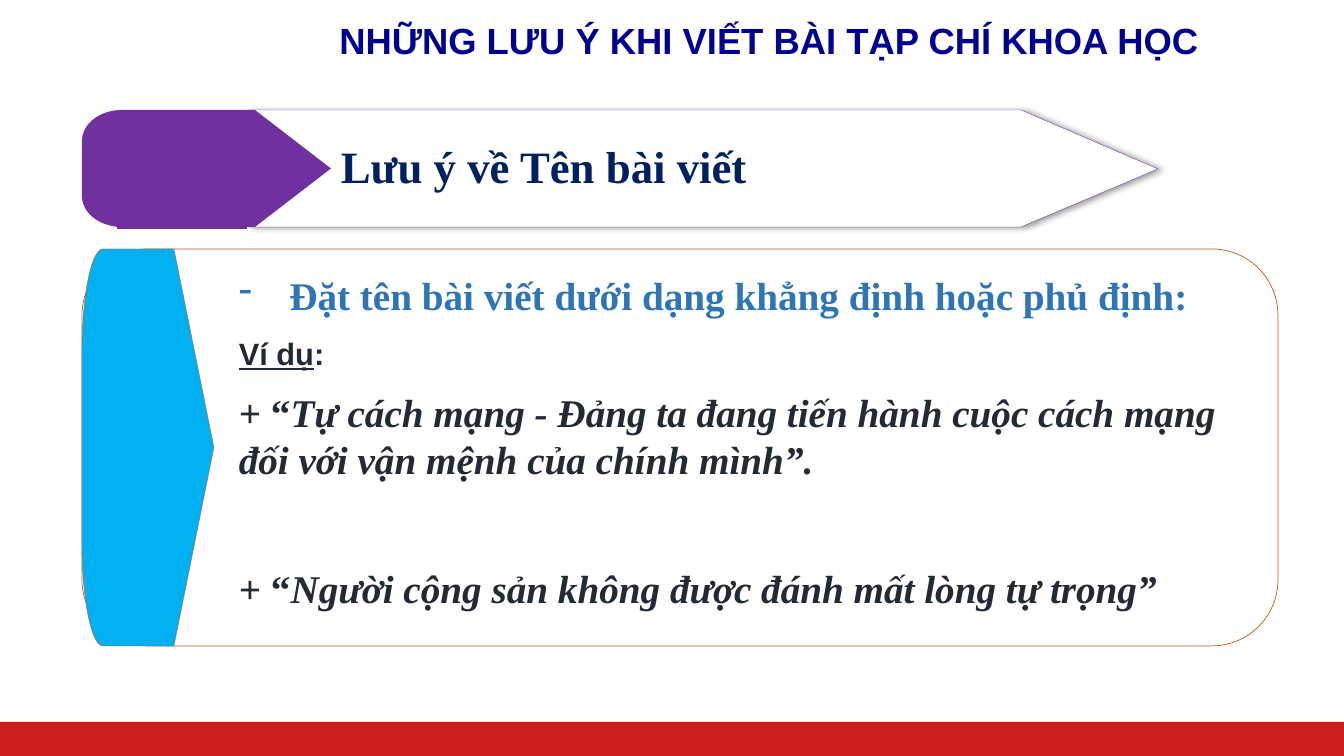
import math

from lxml import etree
from pptx import Presentation, util as u
from pptx.dml.color import RGBColor
from pptx.enum import shapes, text
from pptx.oxml import ns

SCALE = 914400 / 100.8  # EMU in one px

WHITE = RGBColor(0xFF, 0xFF, 0xFF)
RED = RGBColor(0xCD, 0x1D, 0x1D)
ORANGE = RGBColor(0xC5, 0x5A, 0x11)
CYAN = RGBColor(0x00, 0xB0, 0xF0)
PURPLE = RGBColor(0x70, 0x30, 0xA0)
BLUE = RGBColor(0x2E, 0x75, 0xB6)
SLATE = RGBColor(0x22, 0x2A, 0x35)
NAVY = RGBColor(0x00, 0x20, 0x60)
TITLE_BLUE = RGBColor(0x00, 0x00, 0x90)

SERIF = "Times New Roman"
SANS = "Arial"


def px(n):
    return u.Emu(round(n * SCALE))


def paint(sp, fill, line=None, width=0.25):
    sp.shadow.inherit = False
    sp.fill.solid()
    sp.fill.fore_color.rgb = fill
    if line is None:
        sp.line.fill.background()
    else:
        sp.line.color.rgb = line
        sp.line.width = u.Pt(width)
    return sp


def add_preset(s, kind, x, y, w, h, fill, line=None, width=0.25):
    sp = s.shapes.add_shape(kind, px(x), px(y), px(w), px(h))
    return paint(sp, fill, line, width)


def add_outline(s, points, fill, line=None):
    points = [(px(x), px(y)) for x, y in points]
    builder = s.shapes.build_freeform(*points[0], scale=1.0)
    builder.add_line_segments(points[1:], close=True)
    return paint(builder.convert_to_shape(), fill, line)


def add_tag(s, left, top, shoulder, tip, bottom, rx, ry, fill, line=None):
    """Pointed tag with two elliptical corners on its left side."""
    angles = [math.radians(a) for a in range(0, 91, 5)]
    upper = [(left + rx - rx * math.cos(a), top + ry - ry * math.sin(a))
             for a in angles]
    lower = [(x, top + bottom - y) for x, y in reversed(upper)]
    point = [(shoulder, top), (tip, (top + bottom) / 2), (shoulder, bottom)]
    return add_outline(s, upper + point + lower, fill, line)


def add_soft_shadow(sp):
    effects = sp._element.spPr.find(ns.qn("a:effectLst"))
    shadow = etree.SubElement(effects, ns.qn("a:outerShdw"),
                              blurRad=str(u.Pt(4)), dist=str(u.Pt(3)),
                              dir="0", algn="l", rotWithShape="0")
    color = etree.SubElement(shadow, ns.qn("a:srgbClr"), val="000000")
    etree.SubElement(color, ns.qn("a:alpha"), val="40000")


def add_box(s, x, y, w, h, anchor=text.MSO_ANCHOR.TOP):
    tf = s.shapes.add_textbox(px(x), px(y), px(w), px(h)).text_frame
    tf.word_wrap = True
    tf.vertical_anchor = anchor
    return tf


def add_run(p, words, size=28, font=SERIF, color=SLATE, italic=False,
            underline=False):
    r = p.add_run()
    r.text = words
    r.font.size = u.Pt(size)
    r.font.name = font
    r.font.color.rgb = color
    r.font.bold = True
    r.font.italic = italic
    r.font.underline = underline


def add_body_paragraph(tf, before=6):
    p = tf.add_paragraph()
    p.space_before = u.Pt(before)
    p.space_after = u.Pt(6)
    return p


def set_dash(p):
    pPr = p._p.get_or_add_pPr()
    pPr.set("marL", str(u.Inches(0.5)))
    pPr.set("indent", str(-u.Inches(0.5)))
    etree.SubElement(pPr, ns.qn("a:buFontTx"))
    etree.SubElement(pPr, ns.qn("a:buChar"), char="-")


def main():
    prs = Presentation()
    prs.slide_width, prs.slide_height = px(1344), px(756)
    s = prs.slides.add_slide(prs.slide_layouts[6])
    middle = text.MSO_ANCHOR.MIDDLE

    # Footer bar
    add_preset(s, shapes.MSO_SHAPE.RECTANGLE, 0, 722, 1344, 34, RED)

    # Content panel
    add_preset(s, shapes.MSO_SHAPE.ROUNDED_RECTANGLE, 82, 249, 1196, 397,
               WHITE, ORANGE, 0.5)
    add_tag(s, 82, 249, 174, 214, 646, 21, 104, CYAN, ORANGE)

    # Advice and examples
    tf = add_box(s, 229, 266, 1048, 407)
    p = tf.paragraphs[0]
    p.space_after = u.Pt(6)
    set_dash(p)
    add_run(p, "Đặt tên bài viết dưới dạng khẳng định hoặc phủ định:",
            color=BLUE)
    p = add_body_paragraph(tf)
    add_run(p, "Ví dụ", size=22, font=SANS, underline=True)
    add_run(p, ":", size=22, font=SANS)
    examples = [
        (6, "Tự cách mạng - Đảng ta đang tiến hành cuộc cách mạng "
            "đối với vận mệnh của chính mình”."),
        (52, "Người cộng sản không được đánh mất lòng tự trọng”"),
    ]
    for before, words in examples:
        p = add_body_paragraph(tf, before)
        add_run(p, "+ “")
        add_run(p, words, italic=True)

    # Heading arrow
    arrow = [(247, 110), (1021, 110), (1158, 169), (1021, 227), (247, 227)]
    add_soft_shadow(add_outline(s, arrow, WHITE, PURPLE))
    add_tag(s, 82, 110, 255, 331, 227, 40, 31, PURPLE)
    add_preset(s, shapes.MSO_SHAPE.RECTANGLE, 117, 117, 130, 112, PURPLE)
    p = add_box(s, 331, 133, 738, 65, middle).paragraphs[0]
    p.alignment = text.PP_ALIGN.JUSTIFY
    add_run(p, "Lưu ý về Tên bài viết", size=32, color=NAVY)

    # Slide title
    p = add_box(s, 195, 0, 1149, 86, middle).paragraphs[0]
    p.alignment = text.PP_ALIGN.CENTER
    p.line_spacing = 0.9
    add_run(p, "NHỮNG LƯU Ý KHI VIẾT BÀI TẠP CHÍ KHOA HỌC", size=26,
            font=SANS, color=TITLE_BLUE)

    prs.save("out.pptx")


if __name__ == "__main__":
    main()
